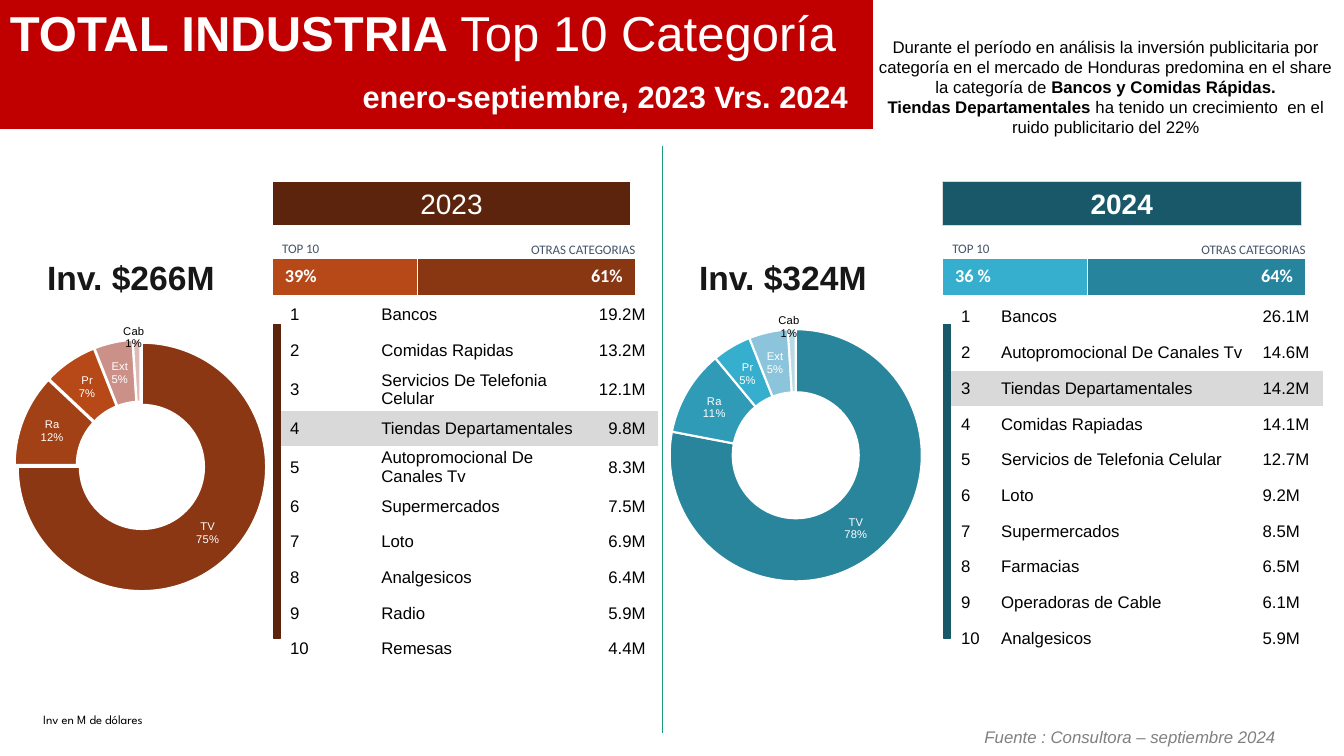
import pptx
import pptx.chart.data
import pptx.dml.color
import pptx.enum.chart
import pptx.enum.shapes
import pptx.enum.text
import pptx.oxml
import pptx.oxml.ns
import pptx.util
from pptx.util import Cm

ALIGN = pptx.enum.text.PP_ALIGN
ANCHOR = pptx.enum.text.MSO_ANCHOR
NO_STYLE = "{2D5ABB26-0587-4C30-8999-92F81FD0307C}"
WHITE, BLACK, GRAY = "FFFFFF", "000000", "D9D9D9"
MEDIA = ["TV", "Ra", "Pr", "Ext", "Cab"]

PANELS = [
    dict(year="2023", year_bold=False, left=6.86, dark="5C240C", outline=WHITE,
         shares=[("39%", "B74919"), ("61%", "893713")],
         rank_at=(6.99, 7.49), widths=(1.32, 6.4, 1.88), indent=1.27,
         amount_align=ALIGN.RIGHT, highlight=3,
         ranking=[("Bancos", "19.2M"), ("Comidas Rapidas", "13.2M"),
                  ("Servicios De Telefonia Celular", "12.1M"),
                  ("Tiendas Departamentales", "9.8M"),
                  ("Autopromocional De Canales Tv", "8.3M"),
                  ("Supermercados", "7.5M"), ("Loto", "6.9M"),
                  ("Analgesicos", "6.4M"), ("Radio", "5.9M"), ("Remesas", "4.4M")],
         donut_at=(-1.27, 8.18), explosion=3, mix=[75, 12, 7, 5, 1],
         colors=["8B3713", "A24116", "B74919", "CB9188", "DCBBB6"],
         total="Inv. $266M", total_left=0.94),
    dict(year="2024", year_bold=True, left=23.75, dark="195869", outline=GRAY,
         shares=[("36 %", "36AFCE"), ("64%", "26859D")],
         rank_at=(23.9, 7.54), widths=(1.3, 6.3, 1.85), indent=0,
         amount_align=ALIGN.LEFT, highlight=2,
         ranking=[("Bancos", "26.1M"), ("Autopromocional De Canales Tv", "14.6M"),
                  ("Tiendas Departamentales", "14.2M"), ("Comidas Rapiadas", "14.1M"),
                  ("Servicios de Telefonia Celular", "12.7M"), ("Loto", "9.2M"),
                  ("Supermercados", "8.5M"), ("Farmacias", "6.5M"),
                  ("Operadoras de Cable", "6.1M"), ("Analgesicos", "5.9M")],
         donut_at=(15.24, 7.92), explosion=0, mix=[78, 11, 5, 5, 1],
         colors=["29859C", "309BB7", "36AFCE", "8CC5DB", "B9D9E6"],
         total="Inv. $324M", total_left=17.37),
]


def rgb(value):
    return pptx.dml.color.RGBColor.from_string(value)


def xml(tag, inner="", attributes=""):
    """Build one element whose tag carries the c: or a: prefix."""
    names = pptx.oxml.ns.nsdecls("a", "c")
    return pptx.oxml.parse_xml(f"<{tag} {names} {attributes}>{inner}</{tag}>")


def style_font(font, color=BLACK, **values):
    for name, value in {"name": "Arial", "size": 12, **values}.items():
        setattr(font, name, pptx.util.Pt(value) if name == "size" else value)
    font.color.rgb = rgb(color)


def write(frame, paragraphs, align=ALIGN.LEFT, **base):
    """Each paragraph is a list of (text, font overrides)."""
    for number, spans in enumerate(paragraphs):
        para = frame.add_paragraph() if number else frame.paragraphs[0]
        para.alignment = align
        for text, changes in spans:
            span = para.add_run()
            span.text = text
            style_font(span.font, **{**base, **changes})


def add_text(page, place, paragraphs, wrap=True, **style):
    box = page.shapes.add_textbox(*map(Cm, place))
    box.text_frame.word_wrap = wrap
    if isinstance(paragraphs, str):
        paragraphs = [[(paragraphs, {})]]
    write(box.text_frame, paragraphs, **style)


def add_rectangle(page, place, fill, line=None, width=1):
    box = page.shapes.add_shape(pptx.enum.shapes.MSO_SHAPE.RECTANGLE, *map(Cm, place))
    box.shadow.inherit = False
    box.fill.solid()
    box.fill.fore_color.rgb = rgb(fill)
    if line:
        box.line.color.rgb = rgb(line)
        box.line.width = pptx.util.Pt(width)
    else:
        box.line.fill.background()
    return box


def add_plain_table(page, left, top, widths, row_height, rows):
    frame = page.shapes.add_table(rows, len(widths), Cm(left), Cm(top),
                                  Cm(sum(widths)), Cm(row_height * rows))
    table = frame.table
    table.first_row = table.horz_banding = False
    table._tbl.tblPr.find(pptx.oxml.ns.qn("a:tableStyleId")).text = NO_STYLE
    for column, width in zip(table.columns, widths):
        column.width = Cm(width)
    for row in table.rows:
        row.height = Cm(row_height)
    return table


def fill_cell(cell, text, fill=None, anchor=ANCHOR.MIDDLE, margins=(0.32, 0.18), **style):
    cell.margin_left = cell.margin_right = Cm(margins[0])
    cell.margin_top = cell.margin_bottom = Cm(margins[1])
    cell.vertical_anchor = anchor
    if fill:
        cell.fill.solid()
        cell.fill.fore_color.rgb = rgb(fill)
    else:
        cell.fill.background()
    write(cell.text_frame, [[(text, {})]], **style)


def add_share_bar(page, panel):
    table = add_plain_table(page, panel["left"], 6.5, (3.66, 5.49), 0.99, 1)
    for cell, (text, fill), align in zip(table.iter_cells(), panel["shares"],
                                         (ALIGN.LEFT, ALIGN.RIGHT)):
        fill_cell(cell, text, fill, ANCHOR.TOP, align=align,
                  name="Calibri", size=13, bold=True, color=WHITE)
        paint = f'<a:solidFill><a:srgbClr val="{WHITE}"/></a:solidFill>'
        for number, (side, points) in enumerate(zip("LRTB", (1, 1, 1, 3))):
            border = xml(f"a:ln{side}", paint, f'w="{pptx.util.Pt(points)}"')
            cell._tc.tcPr.insert(number, border)


def add_ranking(page, panel):
    table = add_plain_table(page, *panel["rank_at"], panel["widths"], 0.9, 10)
    for number, (category, amount) in enumerate(panel["ranking"]):
        fill = GRAY if number == panel["highlight"] else None
        rank_cell, category_cell, amount_cell = table.rows[number].cells
        fill_cell(rank_cell, str(number + 1), fill)
        fill_cell(category_cell, category, fill, margins=(0.03, 0.02))
        fill_cell(amount_cell, amount, fill, align=panel["amount_align"])
        para = category_cell.text_frame.paragraphs[0]
        para._p.get_or_add_pPr().set("marL", str(Cm(panel["indent"])))


def manual_layout(inner):
    return f"<c:layout><c:manualLayout>{inner}</c:manualLayout></c:layout>"


def add_donut(page, panel):
    data = pptx.chart.data.CategoryChartData()
    data.categories = MEDIA
    data.add_series("Series 1", panel["mix"])
    chart = page.shapes.add_chart(pptx.enum.chart.XL_CHART_TYPE.DOUGHNUT,
                                  *map(Cm, (*panel["donut_at"], 9.63, 7.11)), data).chart
    chart.has_legend = chart.has_title = False
    style_font(chart.font, size=10)
    plot = chart.plots[0]
    plot.vary_by_categories = True
    series = plot.series[0]
    for number, color in enumerate(panel["colors"]):
        part = series.points[number].format
        part.fill.solid()
        part.fill.fore_color.rgb = rgb(color)
        part.line.color.rgb = rgb(WHITE)
        part.line.width = pptx.util.Pt(1.5)
    labels = series.data_labels
    for name, value in dict(show_percentage=True, show_category_name=True, show_value=False,
                            number_format="0%", number_format_is_linked=False).items():
        setattr(labels, name, value)
    style_font(labels.font, WHITE, size=8)

    find = pptx.oxml.ns.qn
    label_xml = labels._element
    label_xml.find(find("c:showBubbleSize")).addnext(xml("c:separator", "\n"))
    flags = "".join(f'<c:show{name} val="{int(name in ("CatName", "Percent"))}"/>' for name in
                    ("LegendKey", "Val", "CatName", "SerName", "Percent", "BubbleSize"))
    font = ('<a:bodyPr/><a:p><a:pPr><a:defRPr sz="800"><a:solidFill>'
            f'<a:srgbClr val="{BLACK}"/></a:solidFill><a:latin typeface="Arial"/>'
            '</a:defRPr></a:pPr><a:endParaRPr lang="es"/></a:p>')
    raised = manual_layout('<c:x val="-0.01"/><c:y val="-0.12"/>')
    label_xml.insert(0, xml("c:dLbl", f'<c:idx val="4"/>{raised}'
                            '<c:numFmt formatCode="0%" sourceLinked="0"/>'
                            f'<c:txPr>{font}</c:txPr>{flags}<c:separator>\n</c:separator>'))
    if panel["explosion"]:
        series._element.find(find("c:tx")).addnext(
            xml("c:explosion", attributes=f'val="{panel["explosion"]}"'))
    chart_xml = chart._chartSpace.find(find("c:chart"))
    chart_xml.addnext(xml("c:spPr", "<a:noFill/><a:ln><a:noFill/></a:ln>"))
    area = chart_xml.find(find("c:plotArea"))
    for layout in area.findall(find("c:layout")):
        area.remove(layout)
    area.insert(0, xml("c:layout", '<c:manualLayout><c:layoutTarget val="inner"/>'
                       '<c:xMode val="edge"/><c:yMode val="edge"/><c:x val="0.17"/>'
                       '<c:y val="0.05"/><c:w val="0.66"/><c:h val="0.9"/></c:manualLayout>'))


def add_panel(page, panel):
    left = panel["left"]
    year = add_rectangle(page, (left, 4.57, 9.04, 1.12), panel["dark"], panel["outline"], 0.75)
    year.text_frame.vertical_anchor = ANCHOR.MIDDLE
    write(year.text_frame, [[(panel["year"], {})]], ALIGN.CENTER,
          size=20, color=WHITE, bold=panel["year_bold"])
    add_share_bar(page, panel)
    add_ranking(page, panel)
    caption = dict(name="Calibri", size=9.3, color="44546A")
    add_text(page, (left, 5.94, 3, 0.66), "TOP 10", **caption)
    add_text(page, (left + 5.16, 5.97, 4.24, 0.66), "OTRAS CATEGORIAS",
             align=ALIGN.RIGHT, **caption)
    add_rectangle(page, (left + 0.03, 8.18, 0.18, 7.9), panel["dark"], panel["dark"])
    add_donut(page, panel)
    add_text(page, (panel["total_left"], 6.35, 4.75, 1.27), panel["total"], wrap=False,
             size=24, bold=True, color="181717")


def add_header(page):
    strong = {"bold": True}
    add_text(page, (21.89, 0.79, 11.96, 2.82), [
        [("Durante el período en análisis la inversión publicitaria por categoría en el "
          "mercado de Honduras predomina en el share la categoría de ", {}),
         ("Bancos y Comidas Rápidas.", strong)],
        [("Tiendas Departamentales ", strong),
         ("ha tenido un crecimiento  en el ruido publicitario del 22%", {})],
    ], align=ALIGN.CENTER)
    banner = add_rectangle(page, (0, -0.05, 22, 3.3), "C00000")
    banner.text_frame.vertical_anchor = ANCHOR.TOP
    write(banner.text_frame, [[("TOTAL INDUSTRIA ", strong), ("Top 10 Categoría", {})]],
          size=35, color=WHITE)
    add_text(page, (8.36, 1.83, 13.26, 1.19), "enero-septiembre, 2023 Vrs. 2024",
             align=ALIGN.RIGHT, size=22, bold=True, color=WHITE)


def add_divider(page):
    line = page.shapes.add_connector(pptx.enum.shapes.MSO_CONNECTOR.STRAIGHT,
                                     *map(Cm, (16.69, 3.68, 16.69, 18.47)))
    line.line.color.rgb = rgb("1D9A78")
    line.line.width = pptx.util.Pt(0.5)
    line._element.spPr.append(xml("a:effectLst"))


def main():
    deck = pptx.Presentation()
    deck.slide_width, deck.slide_height = Cm(33.87), Cm(19.05)
    page = deck.slides.add_slide(deck.slide_layouts[6])
    add_header(page)
    for panel in PANELS:
        add_panel(page, panel)
    add_divider(page)
    add_text(page, (0.84, 17.81, 4.29, 0.64), "Inv en M de dólares",
             name="League Spartan", size=9)
    add_text(page, (24.56, 18.19, 8.1, 0.76), "Fuente : Consultora – septiembre 2024",
             wrap=False, italic=True, color="808080")
    deck.save("out.pptx")


if __name__ == "__main__":
    main()
